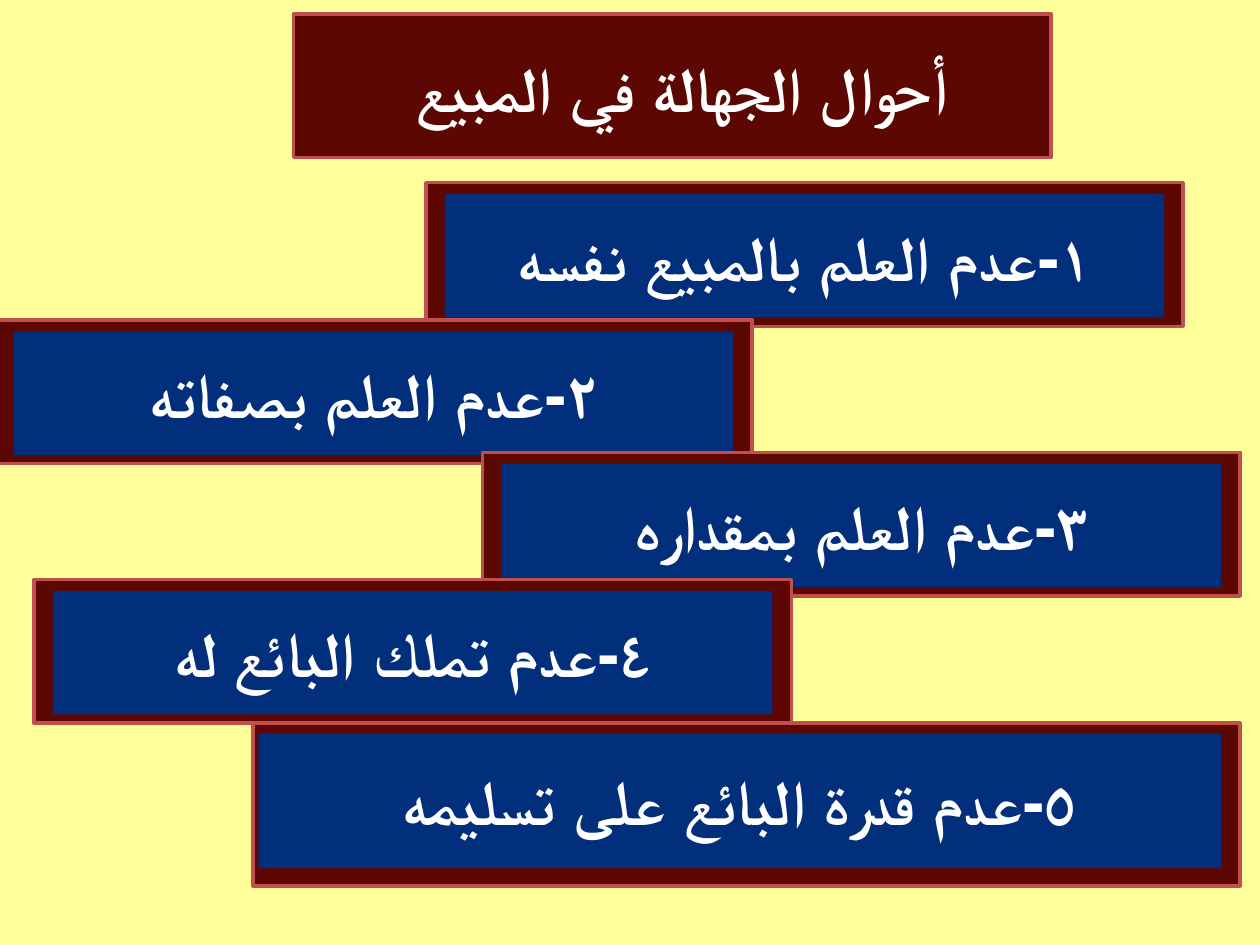
from pptx import Presentation
from pptx.dml.color import RGBColor
from pptx.enum.shapes import MSO_SHAPE
from pptx.enum.text import MSO_ANCHOR, PP_ALIGN
from pptx.util import Inches, Pt

YELLOW = RGBColor(0xFF, 0xFF, 0x99)
MAROON = RGBColor(0x5C, 0x07, 0x01)
RED = RGBColor(0xC0, 0x50, 0x4D)
NAVY = RGBColor(0x01, 0x2F, 0x7B)
WHITE = RGBColor(0xFF, 0xFF, 0xFF)

BANNER_SIZE = (6.01, 1.14)
BANNER_INSETS = (0.15, 0.09, 0.15, 0.07)
REASONS = [
    ("١-عدم العلم بالمبيع نفسه", 3.38, 1.45),
    ("٢-عدم العلم بصفاته", -0.04, 2.54),
    ("٣-عدم العلم بمقداره", 3.83, 3.59),
    ("٤-عدم تملك البائع له", 0.27, 4.6),
]


def add_block(slide, box, fill, line=None, line_width=0.75, kind=MSO_SHAPE.RECTANGLE):
    """Add a flat filled shape, outlined when a line colour is given."""
    shape = slide.shapes.add_shape(kind, *map(Inches, box))
    shape.shadow.inherit = False
    shape.fill.solid()
    shape.fill.fore_color.rgb = fill
    if line is None:
        shape.line.fill.background()
    else:
        shape.line.color.rgb = line
        shape.line.width = Pt(line_width)
    return shape


def write_label(shape, text):
    """Write one centred, right-to-left bold line in a shape."""
    frame = shape.text_frame
    frame.word_wrap = True
    frame.vertical_anchor = MSO_ANCHOR.MIDDLE
    frame.margin_left = frame.margin_right = Inches(0.05)
    frame.margin_top = frame.margin_bottom = Inches(0.05)
    paragraph = frame.paragraphs[0]
    paragraph.text = text
    paragraph.alignment = PP_ALIGN.CENTER
    paragraph._p.get_or_add_pPr().set("rtl", "1")
    paragraph.font.name = "Calibri"
    paragraph.font.size = Pt(36)
    paragraph.font.bold = True
    paragraph.font.color.rgb = WHITE


def add_banner(slide, text, left, top, size=BANNER_SIZE, insets=BANNER_INSETS, panel=NAVY):
    """Add a maroon frame with a label inset in it, on a panel if one is given."""
    width, height = size
    frame = add_block(slide, (left, top, width, height), MAROON, RED, 2,
                      MSO_SHAPE.ROUNDED_RECTANGLE)
    frame.adjustments[0] = 0
    inset_left, inset_top, inset_right, inset_bottom = insets
    inner = (left + inset_left, top + inset_top,
             width - inset_left - inset_right, height - inset_top - inset_bottom)
    if panel is None:
        label = slide.shapes.add_textbox(*map(Inches, inner))
    else:
        label = add_block(slide, inner, panel)
    write_label(label, text)


def main():
    """Build the slide and save it."""
    presentation = Presentation()
    presentation.slide_width = Inches(10)
    presentation.slide_height = Inches(7.5)
    slide = presentation.slides.add_slide(presentation.slide_layouts[6])
    add_block(slide, (0, 0, 10, 7.5), YELLOW, YELLOW)
    add_banner(slide, "أحوال الجهالة في المبيع ", 2.33, 0.11, panel=None)
    for text, left, top in REASONS:
        add_banner(slide, text, left, top)
    add_banner(slide, "٥-عدم قدرة البائع على تسليمه", 2.01, 5.74,
               size=(7.83, 1.29), insets=(0.04, 0.08, 0.15, 0.14))
    presentation.save("out.pptx")


if __name__ == "__main__":
    main()
